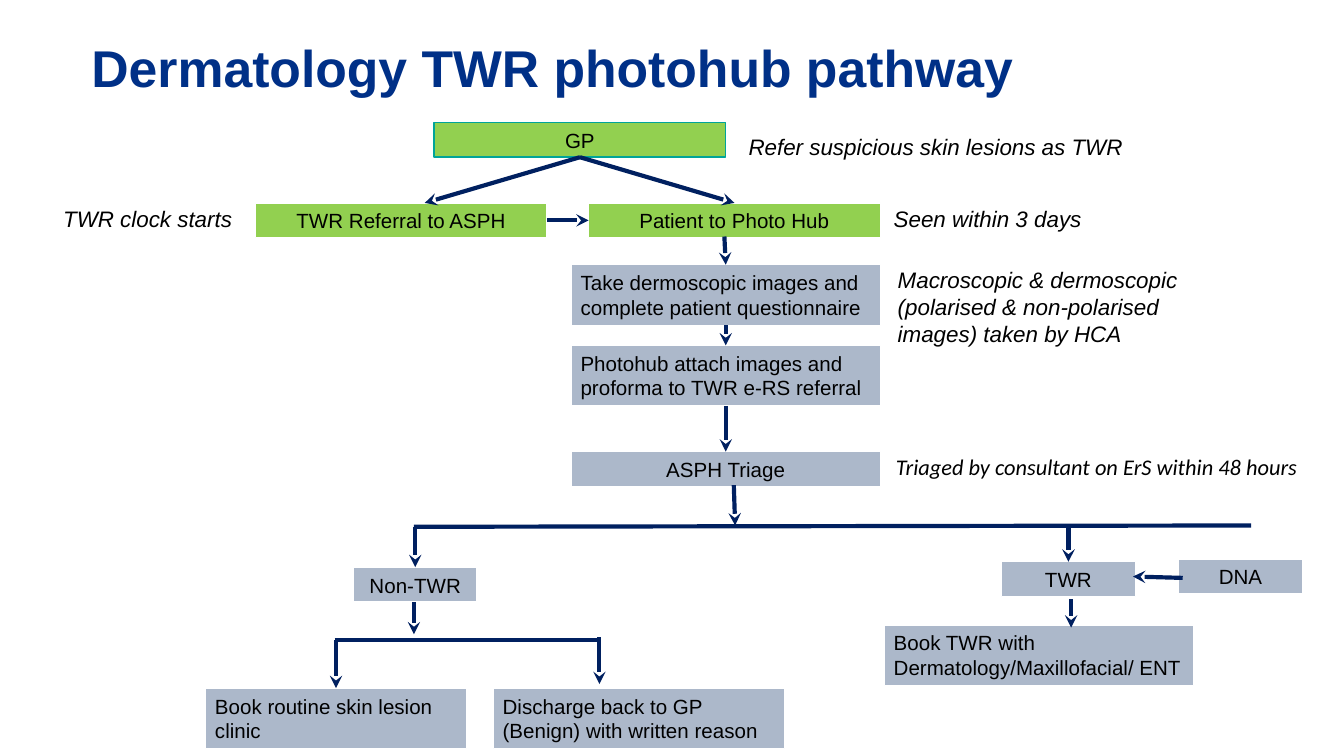
from dataclasses import dataclass
from typing import NamedTuple

from lxml import etree
from pptx import Presentation
from pptx.dml.color import RGBColor
from pptx.enum.shapes import MSO_CONNECTOR, MSO_SHAPE
from pptx.enum.text import MSO_ANCHOR, PP_ALIGN
from pptx.oxml.ns import qn
from pptx.util import Inches, Pt

STRAIGHT = MSO_CONNECTOR.STRAIGHT
RECTANGLE = MSO_SHAPE.RECTANGLE
TOP, MIDDLE = MSO_ANCHOR.TOP, MSO_ANCHOR.MIDDLE
LEFT, CENTER = PP_ALIGN.LEFT, PP_ALIGN.CENTER
SITE_TOP, SITE_LEFT, SITE_BOTTOM, SITE_RIGHT = range(4)


@dataclass(frozen=True)
class Theme:
    title: str = "003087"
    text: str = "000000"
    referral: str = "92D050"
    process: str = "ACB8CA"
    gp_border: str = "00A499"
    border: str = "FFFFFF"
    arrow: str = "002060"
    font: str = "Arial"
    triage_font: str = "Calibri"
    title_size: float = 27.7
    step_size: float = 11
    note_size: float = 12
    border_width: float = 0.75
    arrow_width: float = 2.25


THEME = Theme()


@dataclass(frozen=True)
class Step:
    text: str
    left: float
    top: float
    width: float
    height: float = 0.26
    align: PP_ALIGN = CENTER
    fill: str = THEME.process
    border: str = THEME.border


@dataclass(frozen=True)
class Note:
    text: str
    left: float
    top: float
    width: float
    height: float = 0.28
    align: PP_ALIGN = LEFT
    font: str = THEME.font


class Point(NamedTuple):
    x: float
    y: float


class Joint(NamedTuple):
    step: str
    site: int


class Link(NamedTuple):
    start: Point | Joint
    end: Point | Joint
    arrow: bool = True


GREEN = THEME.referral
STEPS = {
    "gp": Step("GP", 3.23, 0.91, 2.17, fill=GREEN, border=THEME.gp_border),
    "referral": Step("TWR Referral to ASPH", 1.9, 1.51, 2.17, fill=GREEN),
    "hub": Step("Patient to Photo Hub", 4.38, 1.51, 2.17, fill=GREEN),
    "images": Step("Take dermoscopic images and complete patient questionnaire",
                   4.25, 1.97, 2.3, 0.45, LEFT),
    "proforma": Step("Photohub attach images and proforma to TWR e-RS referral",
                     4.25, 2.57, 2.3, 0.45, LEFT),
    "triage": Step("ASPH Triage", 4.25, 3.36, 2.3),
    "non_twr": Step("Non-TWR", 2.63, 4.22, 0.92),
    "twr": Step("TWR", 7.45, 4.18, 1),
    "dna": Step("DNA", 8.77, 4.16, 0.92),
    "book_twr": Step("Book TWR with Dermatology/Maxillofacial/ ENT",
                     6.58, 4.65, 2.3, 0.45, LEFT),
    "routine": Step("Book routine skin lesion clinic", 1.53, 5.12, 1.94, 0.45, LEFT),
    "discharge": Step("Discharge back to GP (Benign) with written reason",
                      3.67, 5.12, 2.17, 0.45, LEFT),
}

NOTES = [
    Note("Refer suspicious skin lesions as TWR", 5.5, 0.95, 3.17),
    Note("TWR clock starts", 0.4, 1.49, 2.3),
    Note("Seen within 3 days", 6.58, 1.49, 2.3),
    Note("Macroscopic & dermoscopic (polarised & non-polarised images) taken by HCA",
         6.61, 1.94, 2.3, 0.68),
    Note("Triaged by consultant on ErS within 48 hours", 6.57, 3.33, 3.18,
         align=CENTER, font=THEME.triage_font),
]

LINKS = [
    Link(Joint("gp", SITE_BOTTOM), Point(3.16, 1.51)),
    Link(Joint("gp", SITE_BOTTOM), Joint("hub", SITE_TOP)),
    Link(Joint("referral", SITE_RIGHT), Joint("hub", SITE_LEFT)),
    Link(Point(5.39, 1.76), Joint("images", SITE_TOP)),
    Link(Joint("images", SITE_BOTTOM), Joint("proforma", SITE_TOP)),
    Link(Joint("proforma", SITE_BOTTOM), Joint("triage", SITE_TOP)),
    Link(Point(5.46, 3.61), Point(5.47, 3.91)),
    Link(Point(3.08, 3.92), Point(9.31, 3.91), arrow=False),
    Link(Point(3.09, 3.92), Joint("non_twr", SITE_TOP)),
    Link(Point(7.95, 3.91), Joint("twr", SITE_TOP)),
    Link(Point(8.8, 4.3), Point(8.43, 4.29)),
    Link(Point(7.97, 4.46), Point(7.97, 4.67)),
    Link(Point(3.08, 4.48), Point(3.08, 4.72)),
    Link(Point(2.49, 4.76), Point(4.45, 4.76), arrow=False),
    Link(Point(2.5, 4.76), Joint("routine", SITE_TOP)),
    Link(Point(4.46, 4.74), Point(4.46, 5.09)),
]


def rgb(color: str) -> RGBColor:
    return RGBColor.from_string(color)


def write(shape, text: str, size: float, color: str = THEME.text, font: str = THEME.font,
          align: PP_ALIGN = LEFT, anchor: MSO_ANCHOR = TOP, bold: bool = False,
          italic: bool = False, spacing: float = 1.0) -> None:
    frame = shape.text_frame
    frame.word_wrap = True
    frame.vertical_anchor = anchor
    frame.margin_left = frame.margin_right = Inches(0.07)
    frame.margin_top = frame.margin_bottom = Inches(0.04)
    paragraph = frame.paragraphs[0]
    paragraph.alignment = align
    paragraph.line_spacing = spacing
    run = paragraph.add_run()
    run.text = text
    run.font.name = font
    run.font.size = Pt(size)
    run.font.bold = bold
    run.font.italic = italic
    run.font.color.rgb = rgb(color)


def draw_title(slide, text: str) -> None:
    title = slide.shapes.add_textbox(Inches(0.61), Inches(0.04), Inches(7.68), Inches(0.98))
    write(title, text, THEME.title_size, THEME.title, anchor=MIDDLE, bold=True, spacing=0.9)


def draw_step(slide, step: Step):
    box = slide.shapes.add_shape(RECTANGLE, Inches(step.left), Inches(step.top),
                                 Inches(step.width), Inches(step.height))
    box.shadow.inherit = False
    box.fill.solid()
    box.fill.fore_color.rgb = rgb(step.fill)
    box.line.color.rgb = rgb(step.border)
    box.line.width = Pt(THEME.border_width)
    write(box, step.text, THEME.step_size, align=step.align)
    return box


def draw_note(slide, note: Note) -> None:
    box = slide.shapes.add_textbox(Inches(note.left), Inches(note.top),
                                   Inches(note.width), Inches(note.height))
    write(box, note.text, THEME.note_size, font=note.font, align=note.align, italic=True)


def locate(place: Point | Joint) -> Point:
    if isinstance(place, Point):
        return place
    step = STEPS[place.step]
    across, down = ((0.5, 0), (0, 0.5), (0.5, 1), (1, 0.5))[place.site]
    return Point(step.left + across * step.width, step.top + down * step.height)


def draw_link(slide, link: Link, boxes: dict) -> None:
    start, end = locate(link.start), locate(link.end)
    connector = slide.shapes.add_connector(STRAIGHT, Inches(start.x), Inches(start.y),
                                           Inches(end.x), Inches(end.y))
    if isinstance(link.start, Joint):
        connector.begin_connect(boxes[link.start.step], link.start.site)
    if isinstance(link.end, Joint):
        connector.end_connect(boxes[link.end.step], link.end.site)
    connector.line.color.rgb = rgb(THEME.arrow)
    connector.line.width = Pt(THEME.arrow_width)
    properties = connector._element.spPr
    if link.arrow:
        etree.SubElement(properties.find(qn("a:ln")), qn("a:tailEnd"), type="stealth")
    etree.SubElement(properties, qn("a:effectLst"))


def main() -> None:
    deck = Presentation()
    deck.slide_width = Inches(10)
    deck.slide_height = deck.slide_width * 9 // 16
    slide = deck.slides.add_slide(deck.slide_layouts[6])
    draw_title(slide, "Dermatology TWR photohub pathway")
    boxes = {key: draw_step(slide, step) for key, step in STEPS.items()}
    for note in NOTES:
        draw_note(slide, note)
    for link in LINKS:
        draw_link(slide, link, boxes)
    deck.save("out.pptx")


if __name__ == "__main__":
    main()
